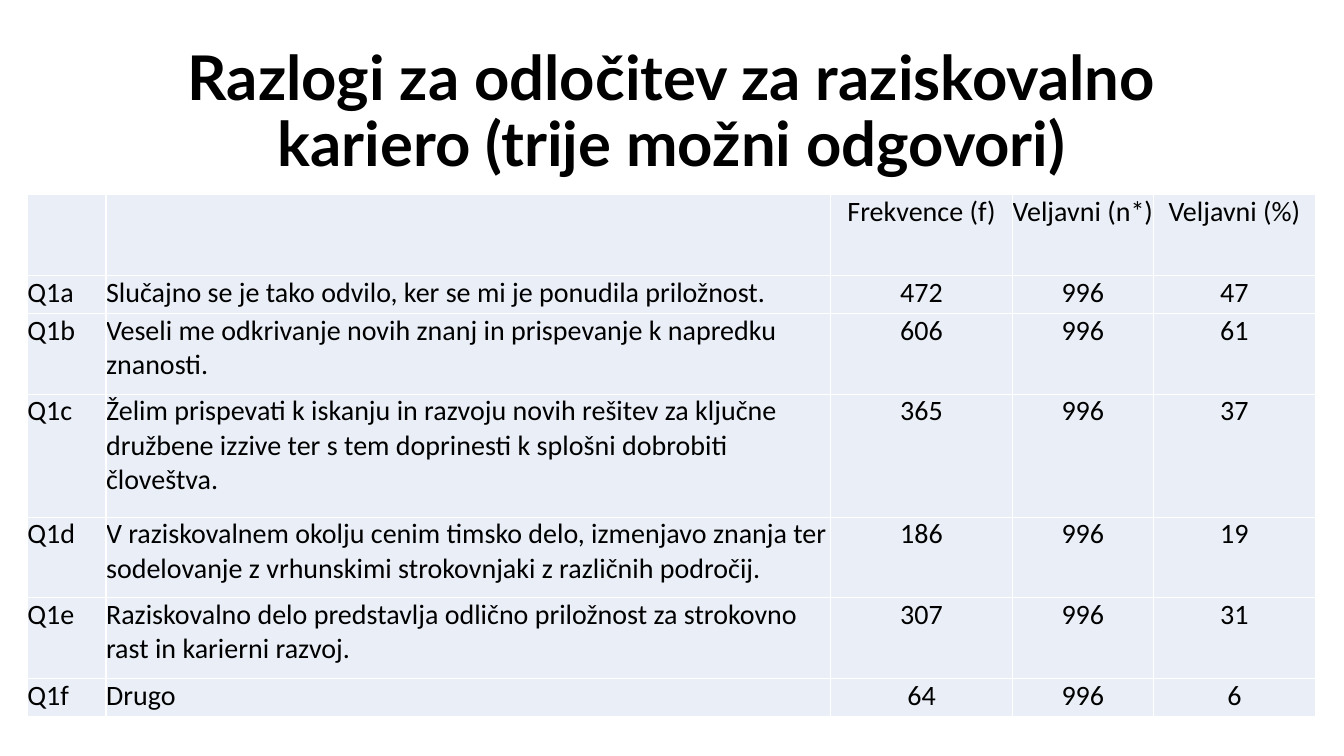
"""Build the slide on reasons for choosing a research career."""
from lxml.etree import SubElement as Sub
from pptx import Presentation
from pptx.dml.color import RGBColor
from pptx.enum.text import MSO_ANCHOR as Anchor, PP_ALIGN as Align
from pptx.oxml.ns import qn
from pptx.util import Pt

BLACK = RGBColor(0, 0, 0)
WHITE = RGBColor(255, 255, 255)
PALE = RGBColor(0xEA, 0xEF, 0xF7)

VALID = "996"
REASONS = [
    ("Q1a", "Slučajno se je tako odvilo, ker se mi je ponudila priložnost.", "472", "47"),
    ("Q1b", "Veseli me odkrivanje novih znanj in prispevanje k napredku znanosti.", "606", "61"),
    ("Q1c", "Želim prispevati k iskanju in razvoju novih rešitev za ključne družbene "
            "izzive ter s tem doprinesti k splošni dobrobiti človeštva.", "365", "37"),
    ("Q1d", "V raziskovalnem okolju cenim timsko delo, izmenjavo znanja ter "
            "sodelovanje z vrhunskimi strokovnjaki z različnih področij.", "186", "19"),
    ("Q1e", "Raziskovalno delo predstavlja odlično priložnost za strokovno rast "
            "in karierni razvoj.", "307", "31"),
    ("Q1f", "Drugo", "64", "6"),
]
ROWS = [("", "", "Frekvence (f)", "Veljavni (n*)", "Veljavni (%)")]
ROWS += [(code, why, freq, VALID, share) for code, why, freq, share in REASONS]
WIDTHS = [56.2, 517.7, 129.6, 100.9, 115.6]
HEIGHTS = [57.6, 27.2, 57.6, 87.8, 57.6, 57.6, 27.2]


def write(para, text, font, size, bold=False):
    run = para.add_run()
    run.text = text
    run.font.name = font
    run.font.size = Pt(size)
    run.font.bold = bold
    run.font.color.rgb = BLACK


def edge(cell):
    props = cell._tc.get_or_add_tcPr()
    for side in ("a:lnL", "a:lnR", "a:lnT", "a:lnB"):
        line = Sub(props, qn(side), w=str(Pt(1)))
        fill = Sub(line, qn("a:solidFill"))
        Sub(fill, qn("a:srgbClr"), val=str(WHITE))


deck = Presentation()
deck.slide_width, deck.slide_height = Pt(960), Pt(540)
slide = deck.slides.add_slide(deck.slide_layouts[5])

title = slide.shapes.title
title.left, title.top, title.width, title.height = Pt(66), Pt(28.8), Pt(828), Pt(104.4)
frame = title.text_frame
frame.word_wrap = True
frame.vertical_anchor = Anchor.MIDDLE
para = frame.paragraphs[0]
para.alignment = Align.CENTER
para.line_spacing = 0.9
write(para, "Razlogi za odločitev za raziskovalno kariero (trije možni odgovori)", "Lato", 44, True)

table = slide.shapes.add_table(len(ROWS), len(WIDTHS), Pt(19.6), Pt(139.2),
                               Pt(sum(WIDTHS)), Pt(sum(HEIGHTS))).table
for col, width in zip(table.columns, WIDTHS):
    col.width = Pt(width)
for row, height, texts in zip(table.rows, HEIGHTS, ROWS):
    row.height = Pt(height)
    for spot, (cell, text) in enumerate(zip(row.cells, texts)):
        cell.margin_left = cell.margin_right = cell.margin_top = cell.margin_bottom = 0
        edge(cell)
        cell.fill.solid()
        cell.fill.fore_color.rgb = PALE
        para = cell.text_frame.paragraphs[0]
        para.alignment = Align.LEFT if spot < 2 else Align.CENTER
        if text:
            write(para, text, "Calibri", 20)

deck.save("out.pptx")
